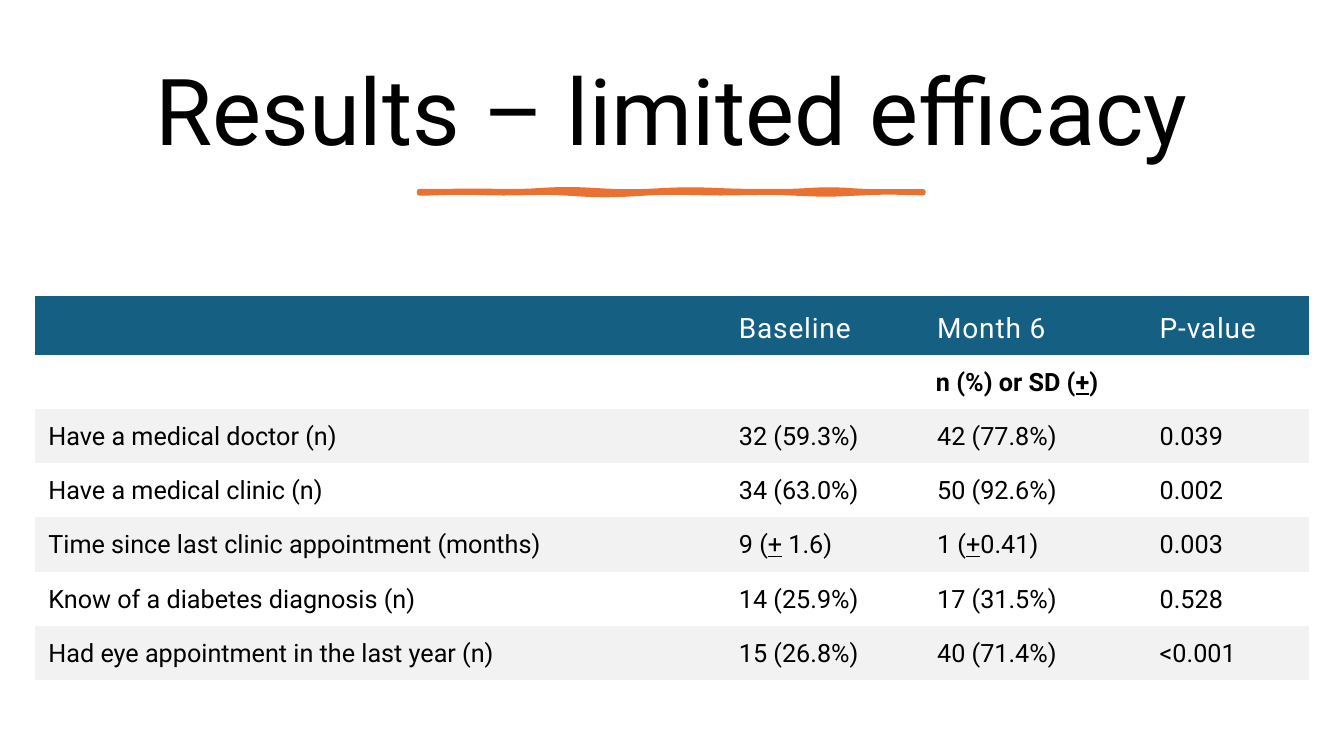
from math import cos, pi
from pptx import Presentation
from pptx.dml.color import RGBColor
from pptx.enum.text import MSO_ANCHOR, MSO_AUTO_SIZE, PP_ALIGN
from pptx.util import Pt

TITLE = "Results – limited efficacy"
HEADER = ["", "Baseline", "Month 6", "P-value"]
UNITS = ["", "n (%) or SD (+)", "", ""]
RESULTS = [
    ["Have a medical doctor (n)", "32 (59.3%)", "42 (77.8%)", "0.039"],
    ["Have a medical clinic (n)", "34 (63.0%)", "50 (92.6%)", "0.002"],
    ["Time since last clinic appointment (months)", "9 (+ 1.6)", "1 (+0.41)", "0.003"],
    ["Know of a diabetes diagnosis (n)", "14 (25.9%)", "17 (31.5%)", "0.528"],
    ["Had eye appointment in the last year (n)", "15 (26.8%)", "40 (71.4%)", "<0.001"],
]
COLORS = {"black": "000000", "white": "FFFFFF", "header": "156082",
          "band": "F2F2F2", "accent": "E97132"}
FONT = "Roboto"
COL_WIDTHS = [493.2, 141.6, 159, 115.7]
HEADER_H, ROW_H = 42, 38.7
NO_STYLE = "{2D5ABB26-0587-4C30-8999-92F81FD0307C}"

# Edges of the brush stroke: points right of its left end, points below its top line
STROKE_LEFT, STROKE_TOP = 299.5, 135.2
TOP_EDGE = [(0, 1.3), (45, 1.2), (68, 1.4), (105, 0), (150, 1.6), (193, 0.2),
            (235, 1.3), (260, 1.4), (293, 0.2), (325, 1.5), (360, 1.5)]
BOTTOM_EDGE = [(360, 2.7), (335, 2.2), (290, 3.6), (250, 2.4), (215, 2.8), (180, 2.3),
               (132, 4.1), (90, 2.4), (60, 2.8), (30, 2.3), (0, 2.9)]


def rgb(name):
    return RGBColor.from_string(COLORS[name])


def write(tf, text, size, color="black", bold=False, align=None, spacing=0):
    """Fill the first paragraph; every plus sign is underlined."""
    p = tf.paragraphs[0]
    p.alignment = align
    parts = text.split("+")
    for i, part in enumerate(parts):
        for piece, underlined in (("+" if i else "", True), (part, False)):
            if not piece:
                continue
            r = p.add_run()
            r.text = piece
            r.font.name, r.font.size, r.font.bold = FONT, Pt(size), bold
            r.font.color.rgb = rgb(color)
            if underlined:
                r.font.underline = True
            if spacing:
                r._r.get_or_add_rPr().set("spc", str(round(spacing * 100)))
    return p


def wavy(knots, steps=6):
    """Ease between the knots and return slide positions."""
    points = []
    for (x0, y0), (x1, y1) in zip(knots, knots[1:]):
        for i in range(steps):
            t = i / steps
            ease = (1 - cos(pi * t)) / 2
            points.append((x0 + (x1 - x0) * t, y0 + (y1 - y0) * ease))
    points.append(knots[-1])
    return [(Pt(STROKE_LEFT + x), Pt(STROKE_TOP + y)) for x, y in points]


def add_title(s):
    title = s.shapes.title
    title.left, title.top, title.width, title.height = Pt(50.4), Pt(33), Pt(859), Pt(98.6)
    tf = title.text_frame
    tf.auto_size = MSO_AUTO_SIZE.NONE
    tf.word_wrap = True
    tf.vertical_anchor = MSO_ANCHOR.MIDDLE
    write(tf, TITLE, 66, align=PP_ALIGN.CENTER).line_spacing = 0.9


def add_brush_stroke(s):
    outline = wavy(TOP_EDGE) + wavy(BOTTOM_EDGE)
    builder = s.shapes.build_freeform(*outline[0])
    builder.add_line_segments(outline[1:], close=True)
    sp = builder.convert_to_shape()
    sp.shadow.inherit = False
    sp.fill.solid()
    sp.fill.fore_color.rgb = rgb("accent")
    sp.line.color.rgb = rgb("accent")
    sp.line.width = Pt(3.25)


def add_results(s):
    rows = [HEADER, UNITS] + RESULTS
    heights = [HEADER_H] + [ROW_H] * (len(rows) - 1)
    frame = s.shapes.add_table(len(rows), len(HEADER), Pt(25.2), Pt(211.5),
                               Pt(sum(COL_WIDTHS)), Pt(sum(heights)))
    table = frame.table
    table.first_row = table.horz_banding = False
    table._tbl.tblPr.find("{*}tableStyleId").text = NO_STYLE
    for column, width in zip(table.columns, COL_WIDTHS):
        column.width = Pt(width)
    for i, (row, height) in enumerate(zip(rows, heights)):
        table.rows[i].height = Pt(height)
        for j, text in enumerate(row):
            cell = table.cell(i, j)
            cell.margin_left = cell.margin_right = cell.margin_top = Pt(9.4)
            cell.margin_bottom = Pt(4.6)
            if i % 2 and i:
                cell.fill.background()
            else:
                cell.fill.solid()
                cell.fill.fore_color.rgb = rgb("band" if i else "header")
            if i == 0:
                cell.vertical_anchor = MSO_ANCHOR.MIDDLE
                style = dict(size=20, color="white", spacing=0.6)
            elif i == 1:
                style = dict(size=18, bold=True, align=PP_ALIGN.CENTER)
            else:
                style = dict(size=18)
            write(cell.text_frame, text, **style)
    table.cell(1, 1).merge(table.cell(1, 3))


def main():
    prs = Presentation()
    prs.slide_width, prs.slide_height = Pt(960), Pt(540)
    s = prs.slides.add_slide(prs.slide_layouts[5])
    add_title(s)
    add_brush_stroke(s)
    add_results(s)
    prs.save("out.pptx")


if __name__ == "__main__":
    main()
